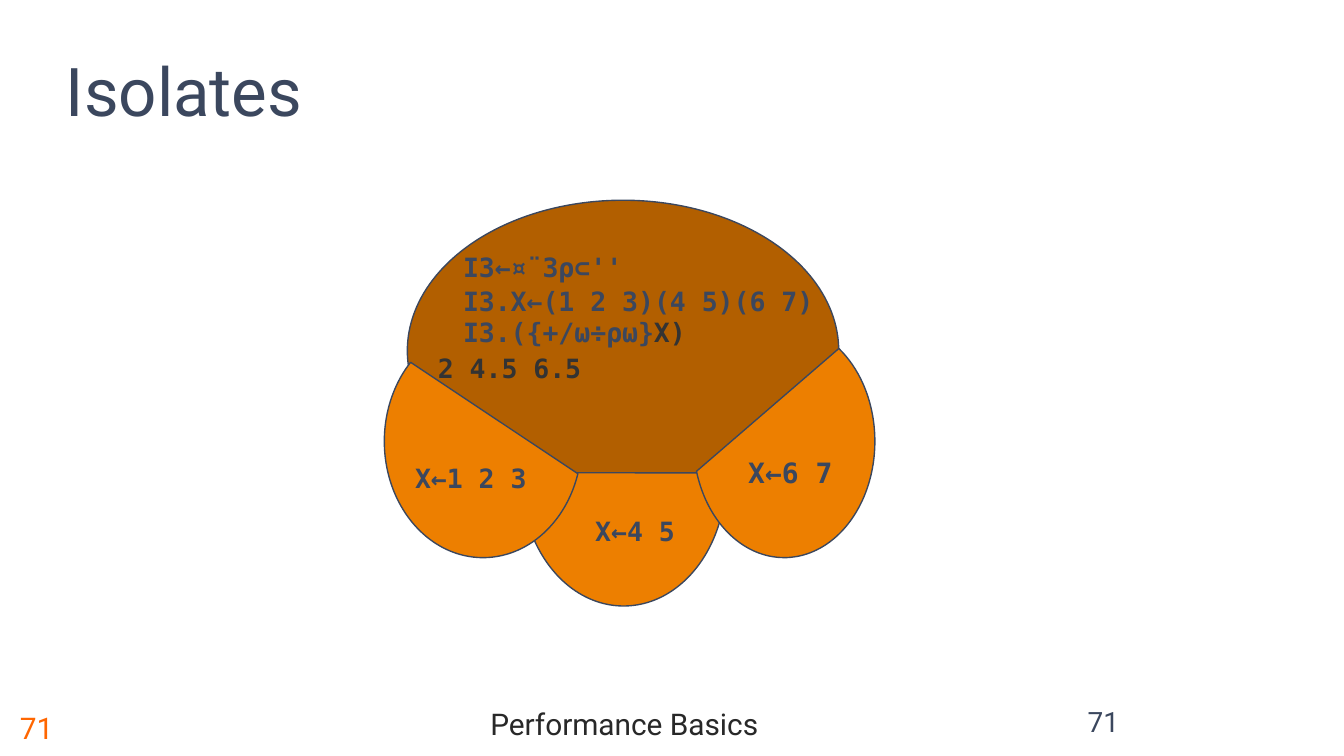
from pptx import Presentation
from pptx.dml.color import RGBColor
from pptx.enum.shapes import MSO_SHAPE as Preset
from pptx.enum.text import MSO_ANCHOR as Anchor, MSO_AUTO_SIZE as AutoSize, PP_ALIGN as Align
from pptx.util import Pt

SLATE = RGBColor(0x3B, 0x47, 0x5E)
CHARCOAL = RGBColor(0x33, 0x33, 0x33)
BLACKISH = RGBColor(0x28, 0x28, 0x28)
ORANGE = RGBColor(0xED, 0x7F, 0x00)
BRIGHT_ORANGE = RGBColor(0xFF, 0x66, 0x00)
BROWN = RGBColor(0xB2, 0x5F, 0x00)


class SlideBuilder:
    """Holds the style and the current slide, with a method per kind of element."""

    body_font = "Roboto"
    code_font = "DejaVu Sans Mono"
    code_size = 14.2

    def __init__(self, page):
        self.page = page

    def style(self, span, font, size, color, bold=False):
        span.font.name = font
        span.font.size = Pt(size)
        span.font.color.rgb = color
        span.font.bold = bold

    def title(self, text, left, top, width, height):
        box = self.page.shapes.title
        box.left, box.top, box.width, box.height = map(Pt, (left, top, width, height))
        frame = box.text_frame
        frame.text = text
        frame.auto_size = AutoSize.NONE
        frame.vertical_anchor = Anchor.BOTTOM
        para = frame.paragraphs[0]
        para.alignment = Align.LEFT
        self.style(para.runs[0], self.body_font, 36, SLATE)

    def text_box(self, text, left, top, width, height, anchor=Anchor.TOP, align=Align.LEFT):
        box = self.page.shapes.add_textbox(*map(Pt, (left, top, width, height)))
        frame = box.text_frame
        frame.word_wrap = True
        frame.vertical_anchor = anchor
        frame.text = text
        para = frame.paragraphs[0]
        para.alignment = align
        return para

    def label(self, text, left, top, width, height, size, color, **layout):
        para = self.text_box(text, left, top, width, height, **layout)
        self.style(para.runs[0], self.body_font, size, color)
        return para

    def code(self, text, left, top, width, size=code_size, color=SLATE):
        para = self.text_box(text, left, top, width, 24.5)
        self.style(para.runs[0], self.code_font, size, color, bold=True)
        return para

    def shape(self, preset, left, top, width, height, fill):
        shape = self.page.shapes.add_shape(preset, *map(Pt, (left, top, width, height)))
        shape.shadow.inherit = False
        shape.fill.solid()
        shape.fill.fore_color.rgb = fill
        shape.line.color.rgb = SLATE
        shape.line.width = Pt(0.75)
        return shape

    def chord(self, left, top, width, height, start, end):
        shape = self.shape(Preset.CHORD, left, top, width, height, ORANGE)
        for index, degrees in enumerate((start, end)):
            shape.adjustments[index] = degrees * 0.6


def main():
    deck = Presentation()
    deck.slide_width, deck.slide_height = Pt(720), Pt(405)
    slide = SlideBuilder(deck.slides.add_slide(deck.slide_layouts[5]))

    footer = slide.label("Performance Basics", 56.2, 373.7, 556.6, 31.7, 16, BLACKISH,
                         anchor=Anchor.MIDDLE, align=Align.CENTER)
    footer.line_spacing = 0.8
    slide.label("71", 3.6, 373.7, 52.6, 31.7, 16, BRIGHT_ORANGE, anchor=Anchor.MIDDLE)
    slide.title("Isolates", 28.1, 5.8, 612, 67.7)

    slide.shape(Preset.OVAL, 218.2, 107.3, 231.1, 161.3, BROWN)
    slide.chord(279.4, 187.9, 109.4, 136.8, 357, 183.2)
    slide.chord(371.5, 174.2, 97.2, 124.6, 300.5, 161.15)
    slide.chord(205.9, 174.2, 105.8, 124.6, 18.85, 227.5)

    slide.code("X←1 2 3", 215.3, 244.1, 87.1)
    slide.code("X←4 5", 311.8, 272.2, 69.8)
    slide.code("X←6 7", 393.8, 240.5, 67.7, size=15)

    slide.code("  I3←¤¨3⍴⊂''", 223.9, 131, 248.4)
    slide.code("  I3.X←(1 2 3)(4 5)(6 7)", 223.9, 149, 248.4)
    average = slide.code("  I3.({+/⍵÷⍴⍵}", 223.9, 165.6, 248.4)
    argument = average.add_run()
    argument.text = "X)"
    slide.style(argument, slide.code_font, slide.code_size, CHARCOAL, bold=True)
    slide.code("2 4.5 6.5", 227.5, 185, 248.4, color=CHARCOAL)

    slide.label("71", 516.2, 373.7, 149.8, 27.4, 15, SLATE, align=Align.CENTER)
    deck.save("out.pptx")


if __name__ == "__main__":
    main()
